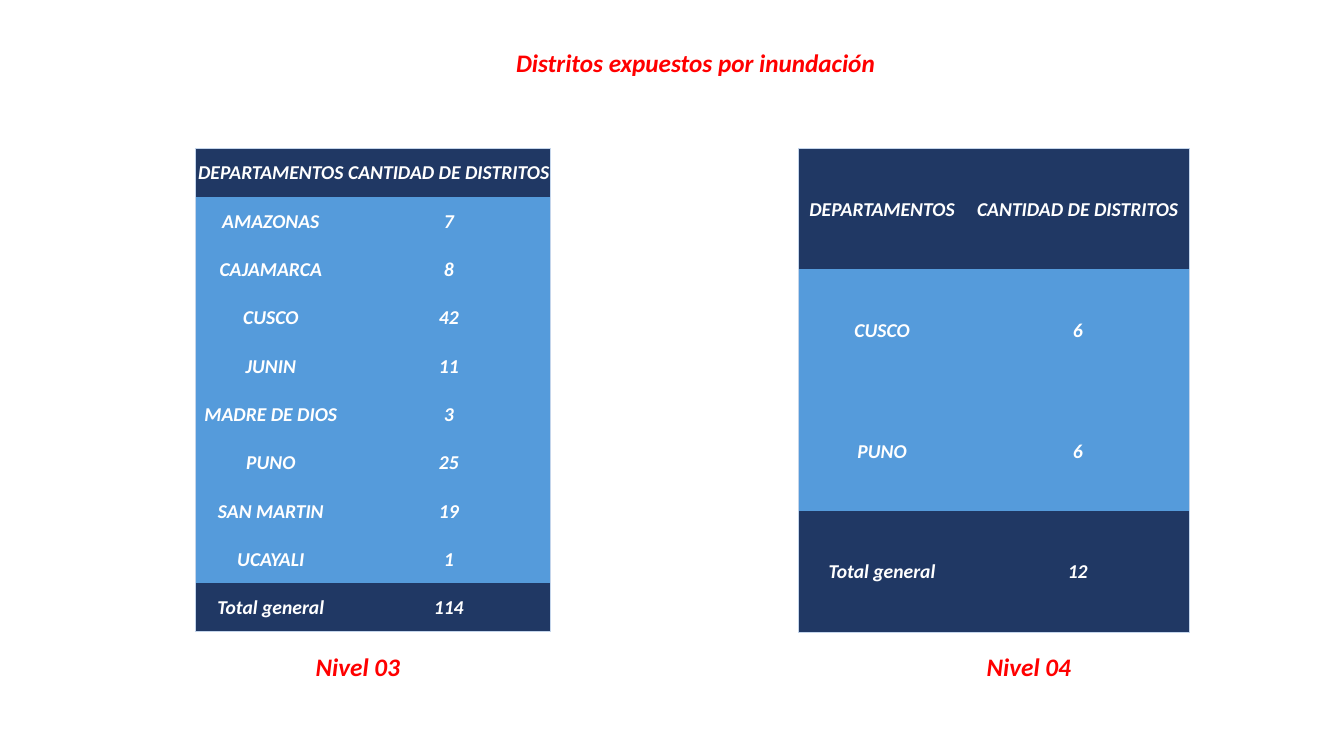
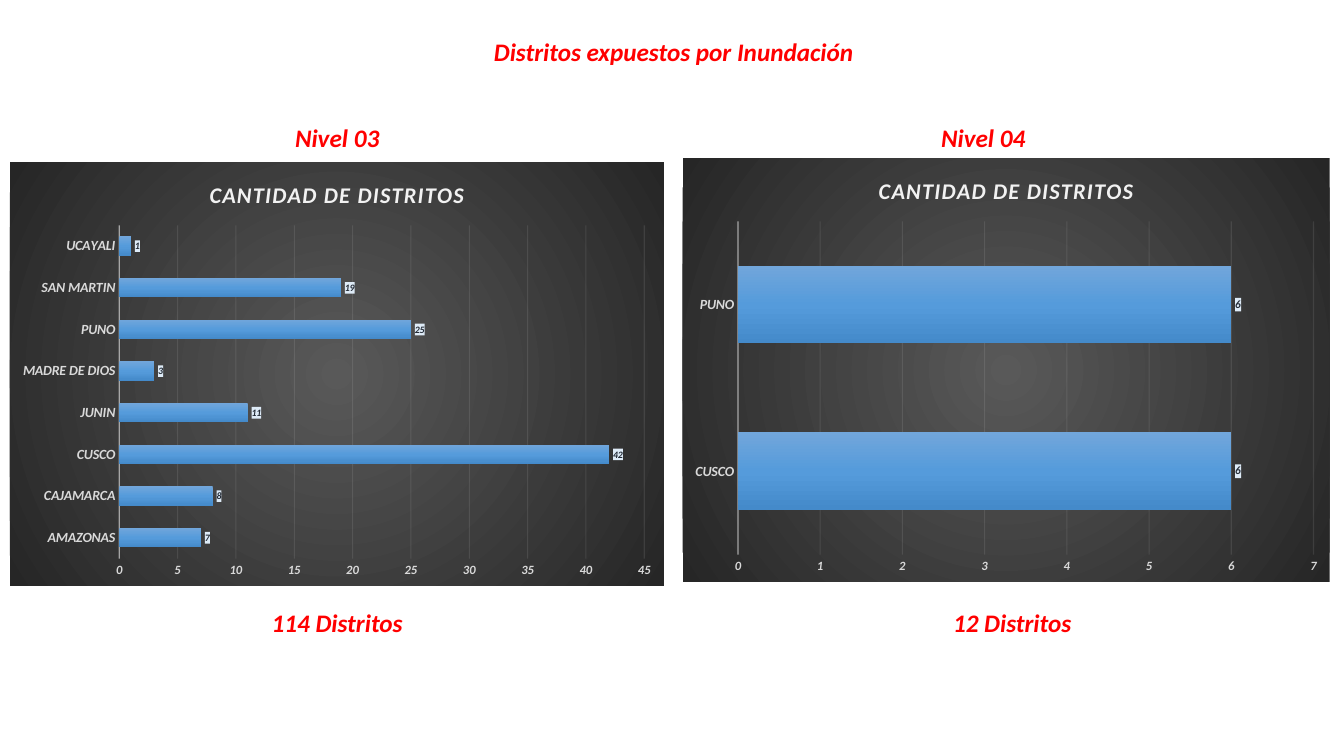
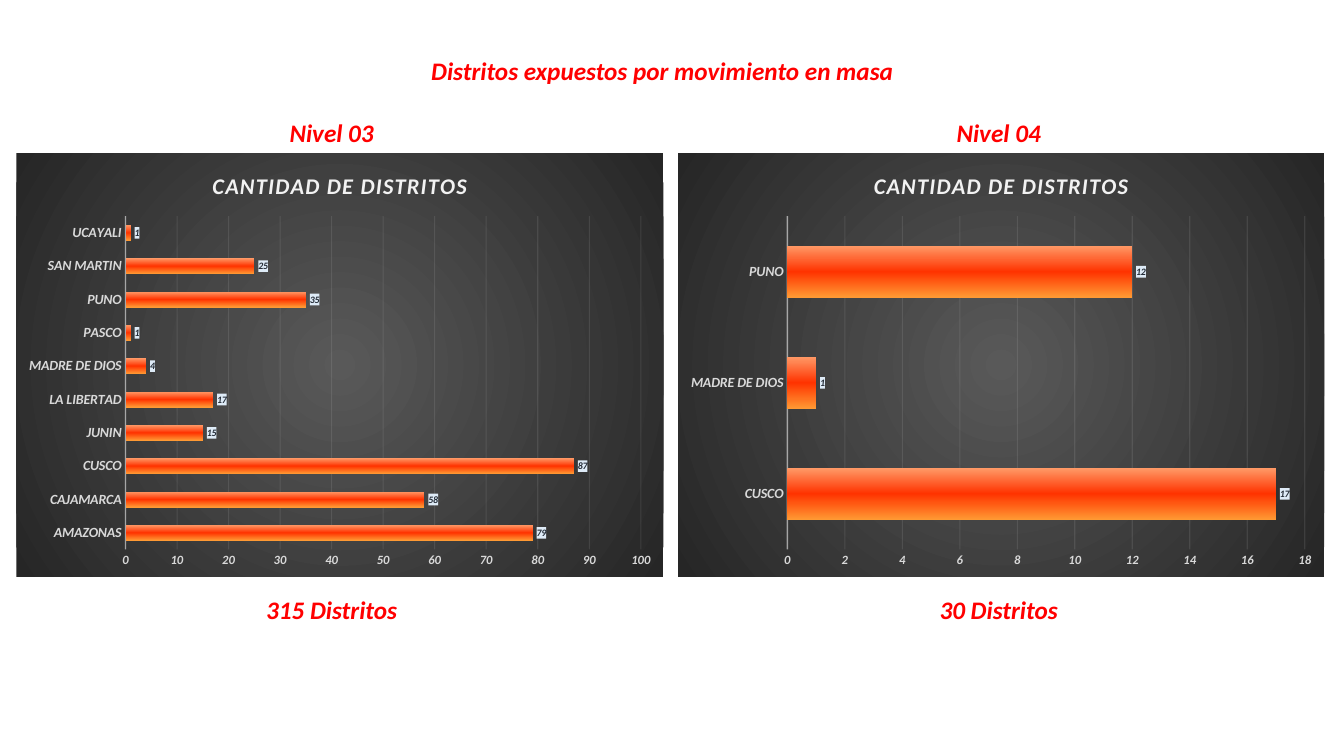
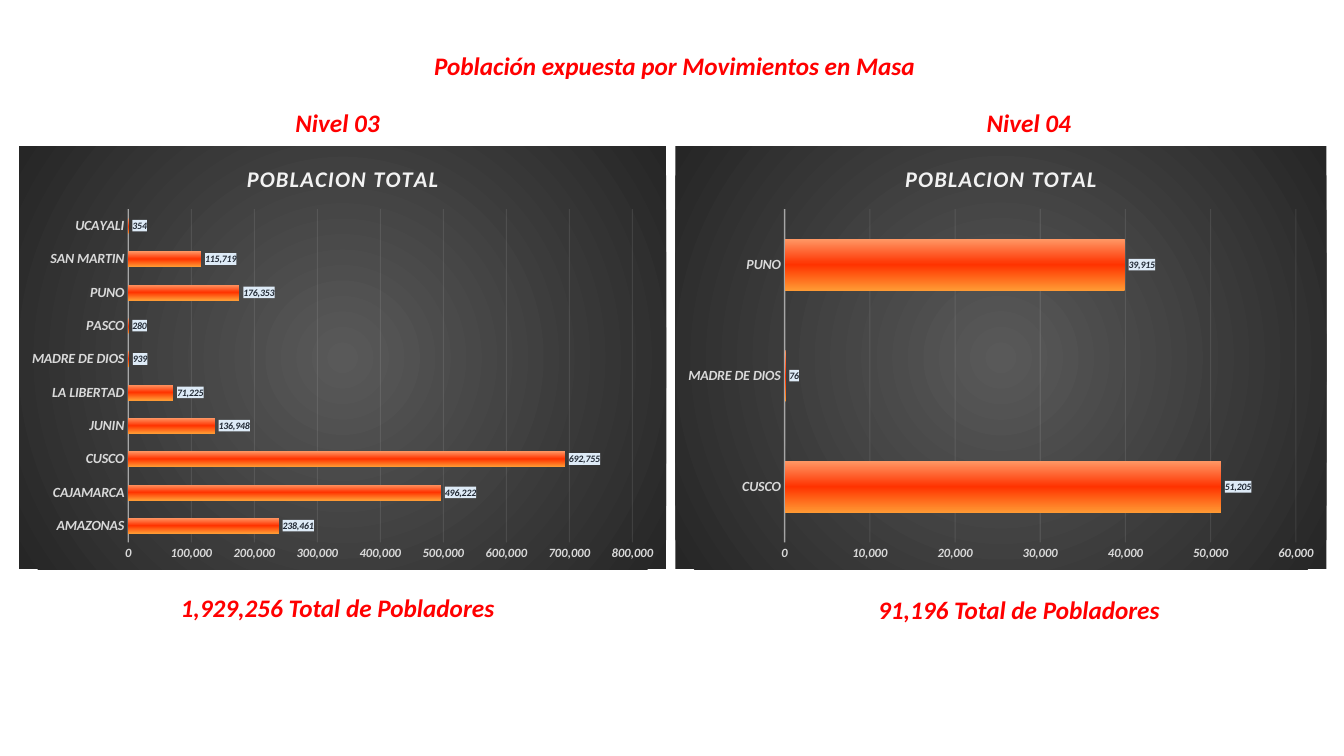
from lxml import etree
from pptx import Presentation
from pptx.chart.data import CategoryChartData
from pptx.dml.color import RGBColor
from pptx.enum.chart import XL_CHART_TYPE, XL_LABEL_POSITION, XL_TICK_MARK
from pptx.enum.text import MSO_ANCHOR, PP_ALIGN
from pptx.oxml import parse_xml
from pptx.oxml.ns import nsdecls, qn
from pptx.util import Cm, Pt

BAR_CLUSTERED = XL_CHART_TYPE.BAR_CLUSTERED
OUTSIDE_END = XL_LABEL_POSITION.OUTSIDE_END
NO_TICK = XL_TICK_MARK.NONE
TOP, MIDDLE = MSO_ANCHOR.TOP, MSO_ANCHOR.MIDDLE
CENTER = PP_ALIGN.CENTER
rgb = RGBColor.from_string

FONT = "Calibri"
RED, WHITE = "FF0000", "FFFFFF"
NAVY, BLUE, TABLE_EDGE = "203864", "559BDB", "C4D5EB"
PALE, LIGHT_GRAY, LABEL_FILL, LABEL_TEXT = "F2F2F2", "D9D9D9", "DEEBF7", "222A35"
BLUE_BARS = ["71A6DB", "559BDB", "448ACA"]
FIRE_BARS = ["FF9966", "FF3300", "FF9933"]
CHART_BACKGROUND = ["595959", "262626"]
DOWNWARD = '<a:lin ang="5400000" scaled="0"/>'
RADIAL = ('<a:path path="circle"><a:fillToRect l="50000" t="50000" '
          'r="50000" b="50000"/></a:path>')
NO_STYLE = "{2D5ABB26-0587-4C30-8999-92F81FD0307C}"


def style_font(font, size, color):
    font.name, font.size = FONT, Pt(size)
    font.bold = font.italic = True
    font.color.rgb = rgb(color)


def gradient(colors, direction):
    """Return a gradient fill element with evenly spaced stops."""
    step = 100000 // (len(colors) - 1)
    stops = "".join(f'<a:gs pos="{index * step}"><a:srgbClr val="{color}"/></a:gs>'
                    for index, color in enumerate(colors))
    return parse_xml(f'<a:gradFill {nsdecls("a")} rotWithShape="1">'
                     f'<a:gsLst>{stops}</a:gsLst>{direction}</a:gradFill>')


deck = Presentation()
deck.slide_width, deck.slide_height = Cm(33.87), Cm(19.05)
title_only = deck.slide_layouts[5]

# Captions: text, horizontal centre, top; the first on each page is its title
page_captions = [
    [("Distritos expuestos por inundación", 17.53, 1.07),
     ("Nivel 03", 9.02, 16.28), ("Nivel 04", 25.93, 16.28)],
    [("Distritos expuestos por Inundación", 16.98, 0.79),
     ("Nivel 03", 8.5, 2.95), ("Nivel 04", 24.78, 2.95),
     ("114 Distritos", 8.5, 15.19), ("12 Distritos", 25.51, 15.19)],
    [("Distritos expuestos por movimiento en masa", 16.69, 1.27),
     ("Nivel 03", 8.36, 2.82), ("Nivel 04", 25.17, 2.82),
     ("315 Distritos", 8.36, 14.86), ("30 Distritos", 25.17, 14.86)],
    [("Población expuesta por Movimientos en Masa", 17, 1.14),
     ("Nivel 03", 8.51, 2.57), ("Nivel 04", 25.93, 2.57),
     ("1,929,256 Total de Pobladores", 8.51, 14.81),
     ("91,196 Total de Pobladores", 25.68, 14.86)],
]
pages = []
for captions in page_captions:
    page = deck.slides.add_slide(title_only)
    pages.append(page)
    for index, (text, center, top) in enumerate(captions):
        width = 8.6 if index else 14
        place = Cm(center - width / 2), Cm(top), Cm(width), Cm(1.02)
        if index:
            box = page.shapes.add_textbox(*place)
        else:
            box = page.shapes.title
            box.left, box.top, box.width, box.height = place
        frame = box.text_frame
        frame.word_wrap = True
        frame.vertical_anchor = TOP
        para = frame.paragraphs[0]
        para.alignment = CENTER
        span = para.add_run()
        span.text = text
        style_font(span.font, 18, RED)

# Tables: left, column widths, body rows, total
table_top, table_height = 3.74, 12.19
tables = [
    (4.91, (3.83, 5.14),
     [("AMAZONAS", 7), ("CAJAMARCA", 8), ("CUSCO", 42), ("JUNIN", 11),
      ("MADRE DE DIOS", 3), ("PUNO", 25), ("SAN MARTIN", 19), ("UCAYALI", 1)], 114),
    (20.12, (4.22, 5.64), [("CUSCO", 6), ("PUNO", 6)], 12),
]
for left, widths, body, total in tables:
    rows = [("DEPARTAMENTOS", "CANTIDAD DE DISTRITOS"), *body, ("Total general", total)]
    last = len(rows) - 1
    holder = pages[0].shapes.add_table(len(rows), 2, Cm(left), Cm(table_top),
                                       Cm(sum(widths)), Cm(table_height))
    holder.element.xpath(".//a:tableStyleId")[0].text = NO_STYLE
    table = holder.table
    for column, width in zip(table.columns, widths):
        column.width = Cm(width)
    for row_index, row in enumerate(rows):
        table.rows[row_index].height = Cm(table_height / len(rows))
        for column_index, value in enumerate(row):
            cell = table.cell(row_index, column_index)
            cell.margin_left = cell.margin_right = cell.margin_top = Cm(0.03)
            cell.margin_bottom = 0
            cell.vertical_anchor = MIDDLE
            cell.fill.solid()
            cell.fill.fore_color.rgb = rgb(NAVY if row_index in (0, last) else BLUE)
            para = cell.text_frame.paragraphs[0]
            para.alignment = CENTER
            span = para.add_run()
            span.text = str(value)
            style_font(span.font, 14, WHITE)
            outer_edges = [("lnB", row_index == last), ("lnT", row_index == 0),
                           ("lnR", column_index == 1), ("lnL", column_index == 0)]
            for edge, is_outer in outer_edges:
                if is_outer:
                    cell._tc.get_or_add_tcPr().insert(0, parse_xml(
                        f'<a:{edge} {nsdecls("a")} w="6350"><a:solidFill>'
                        f'<a:srgbClr val="{TABLE_EDGE}"/></a:solidFill></a:{edge}>'))

# Charts: page, left, top, width, title, bar colours, label size, categories, values
eight = ["AMAZONAS", "CAJAMARCA", "CUSCO", "JUNIN", "MADRE DE DIOS", "PUNO",
         "SAN MARTIN", "UCAYALI"]
ten = ["AMAZONAS", "CAJAMARCA", "CUSCO", "JUNIN", "LA LIBERTAD", "MADRE DE DIOS",
       "PASCO", "PUNO", "SAN MARTIN", "UCAYALI"]
three = ["CUSCO", "MADRE DE DIOS", "PUNO"]
districts, population = "CANTIDAD DE DISTRITOS", "POBLACION TOTAL"
charts = [
    (pages[1], 0.25, 4.09, 16.48, districts, BLUE_BARS, 7, eight,
     [7, 8, 42, 11, 3, 25, 19, 1]),
    (pages[1], 17.2, 3.99, 16.31, districts, BLUE_BARS, 8, ["CUSCO", "PUNO"], [6, 6]),
    (pages[2], 0.41, 3.86, 16.31, districts, FIRE_BARS, 7, ten,
     [79, 58, 87, 15, 17, 4, 1, 35, 25, 1]),
    (pages[2], 17.09, 3.86, 16.28, districts, FIRE_BARS, 7, three, [17, 1, 12]),
    (pages[3], 0.48, 3.68, 16.31, population, FIRE_BARS, 7, ten,
     [238461, 496222, 692755, 136948, 71225, 939, 280, 176353, 115719, 354]),
    (pages[3], 17.02, 3.68, 16.41, population, FIRE_BARS, 7, three, [51205, 76, 39915]),
]
for page, left, top, width, title, bar_colors, label_size, categories, values in charts:
    data = CategoryChartData(number_format="#,##0")
    data.categories = categories
    data.add_series(title, values)
    chart = page.shapes.add_chart(BAR_CLUSTERED, Cm(left), Cm(top), Cm(width),
                                  Cm(10.67), data).chart
    chart.has_legend = False
    chart.font.name, chart.font.size = FONT, Pt(10)

    chart.has_title = True
    span = chart.chart_title.text_frame.paragraphs[0].add_run()
    span.text = title
    style_font(span.font, 16, PALE)
    chart.element.xpath(".//c:title//a:rPr")[0].set("spc", "100")

    plot = chart.plots[0]
    plot.gap_width, plot.overlap = 115, -20
    plot.vary_by_categories = False
    series = plot.series[0]
    series.invert_if_negative = False
    bar_format = chart.element.xpath(".//c:ser")[0].get_or_add_spPr()
    bar_format.append(gradient(bar_colors, DOWNWARD))

    labels = series.data_labels
    labels.show_value = True
    labels.position = OUTSIDE_END
    labels.number_format, labels.number_format_is_linked = "#,##0", False
    style_font(labels.font, label_size, LABEL_TEXT)
    chart.element.xpath(".//c:dLbls/c:txPr")[0].addprevious(parse_xml(
        f'<c:spPr {nsdecls("c", "a")}><a:solidFill><a:srgbClr val="{LABEL_FILL}"/>'
        '</a:solidFill></c:spPr>'))

    category_axis, value_axis = chart.category_axis, chart.value_axis
    for axis, size in [(category_axis, 10), (value_axis, 9)]:
        axis.major_tick_mark = axis.minor_tick_mark = NO_TICK
        style_font(axis.tick_labels.font, size, LIGHT_GRAY)
    value_axis.tick_labels.number_format = "#,##0"
    value_axis.tick_labels.number_format_is_linked = False
    value_axis.format.line.fill.background()
    category_axis.has_major_gridlines = False
    value_axis.has_major_gridlines = True
    for line, weight in [(category_axis.format.line, 1),
                         (value_axis.major_gridlines.format.line, 0.75)]:
        line.width = Pt(weight)
        line.color.rgb = rgb(PALE)
    for query, opacity in [(".//c:catAx/c:spPr//a:srgbClr", 54),
                           (".//c:majorGridlines//a:srgbClr", 10)]:
        line_color = chart.element.xpath(query)[0]
        etree.SubElement(line_color, qn("a:alpha")).set("val", str(opacity * 1000))

    background = parse_xml(f'<c:spPr {nsdecls("c", "a")}><a:ln><a:noFill/></a:ln></c:spPr>')
    background.insert(0, gradient(CHART_BACKGROUND, RADIAL))
    chart.element.find(qn("c:chart")).addnext(background)

deck.save("out.pptx")
